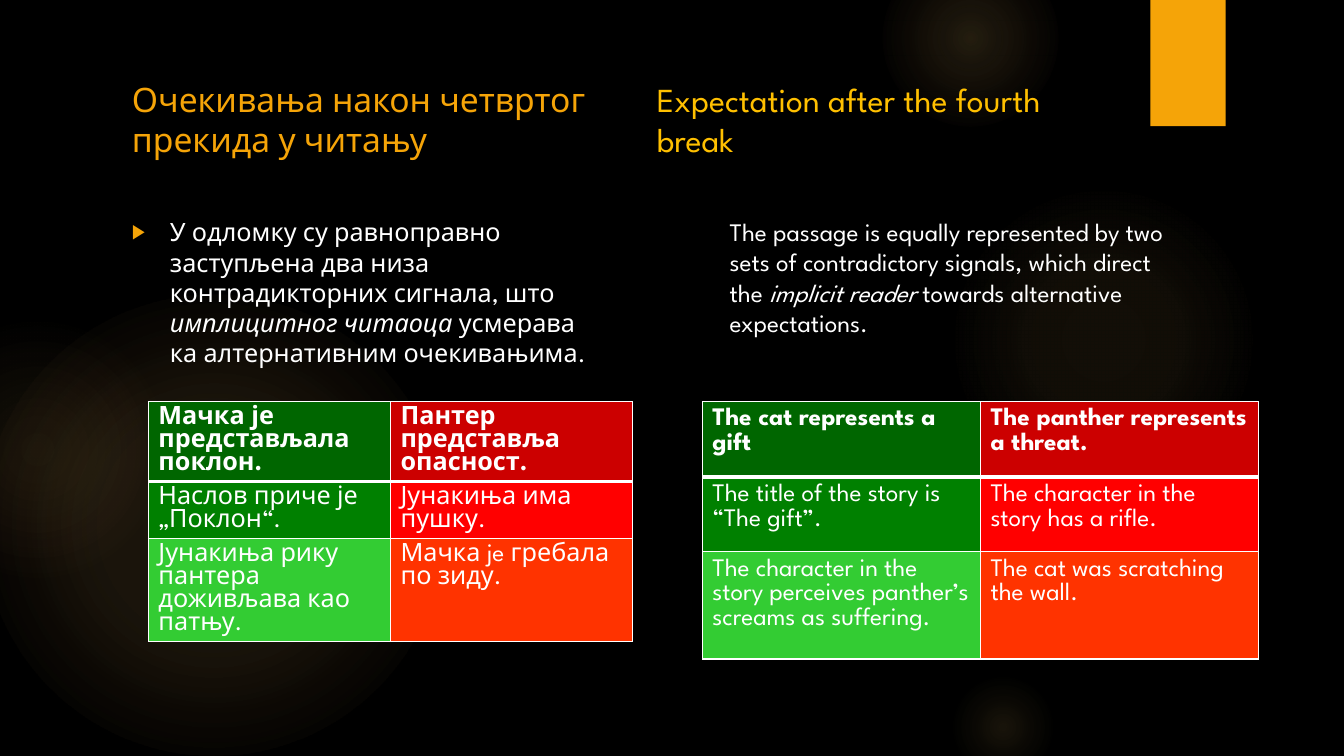
import lxml.etree
import pptx
import pptx.dml.color
import pptx.enum.shapes
import pptx.enum.text
import pptx.oxml
import pptx.oxml.ns
import pptx.util

Cm = pptx.util.Cm
Pt = pptx.util.Pt
qn = pptx.oxml.ns.qn
FONT = "League Spartan"
COLORS = {
    "black": "000000", "white": "FFFFFF", "amber": "F5A408", "gold": "FFC000",
    "glow": "FAC96A", "peach": "F59B74",
}
FILLS = [("006600", "CC0000"), ("008000", "FF0000"), ("33CC33", "FF3300")]

# left, top, size in cm; then (stop %, alpha %) pairs and the outer colour
GLOWS = [
    (-0.43, 7.42, 11.63, [(0, 11), (36, 10), (75, 0)], "glow"),
    (-2.34, 8.05, 6.55, [(0, 8), (36, 5), (71, 0)], "peach"),
    (23.9, 4.65, 7.82, [(0, 7), (36, 6), (69, 0)], "glow"),
    (22.23, -1.27, 4.45, [(0, 14), (36, 7), (73, 0)], "glow"),
    (23.9, 16.94, 2.74, [(0, 10), (31, 5), (66, 0)], "glow"),
]
SERBIAN = [
    ("Мачка је представљала поклон.", "Пантер представља опасност."),
    ("Наслов приче је „Поклон“.", "Јунакиња има пушку."),
    ("Јунакиња рику пантера доживљава као патњу.", "Мачка je гребала по зиду."),
]
ENGLISH = [
    ("The cat represents a gift", "The panther represents a threat."),
    ("The title of the story is “The gift”.", "The character in the story has a rifle."),
    ("The character in the story perceives panther’s screams as suffering.",
     "The cat was scratching the wall."),
]


def rgb(code):
    return pptx.dml.color.RGBColor.from_string(code)


def place(shape, left, top, width, height):
    shape.left, shape.top = Cm(left), Cm(top)
    shape.width, shape.height = Cm(width), Cm(height)


def style(para, size, color, bold=False, lines=None, before=0, after=0):
    font = para.font
    font.name, font.size, font.bold = FONT, Pt(size), bold
    font.color.rgb = rgb(color)
    para.line_spacing = lines
    para.space_before, para.space_after = Pt(before), Pt(after)


def add_back(slide, kind, box):
    """Add a plain shape behind the placeholders."""
    shape = slide.shapes.add_shape(kind, *map(Cm, box))
    shape.shadow.inherit = False
    shape.line.fill.background()
    slide.placeholders[1].element.addprevious(shape.element)
    return shape


def add_glow(slide, left, top, size, stops, outer):
    oval = pptx.enum.shapes.MSO_SHAPE.OVAL
    shape = add_back(slide, oval, (left, top, size, size))
    names = ["glow", "glow", outer]
    marks = "".join(
        f'<a:gs pos="{pos * 1000}"><a:srgbClr val="{COLORS[name]}">'
        f'<a:alpha val="{alpha * 1000}"/></a:srgbClr></a:gs>'
        for (pos, alpha), name in zip(stops, names))
    grad = pptx.oxml.parse_xml(
        f'<a:gradFill {pptx.oxml.ns.nsdecls("a")} rotWithShape="1"><a:gsLst>{marks}</a:gsLst>'
        '<a:path path="circle"><a:fillToRect l="50000" t="50000" r="50000" b="50000"/>'
        '</a:path></a:gradFill>')
    shape.element.spPr.find(qn("a:prstGeom")).addnext(grad)


def fill_head(holder, text, color, box):
    place(holder, *box)
    frame = holder.text_frame
    frame.text = text
    frame.auto_size = pptx.enum.text.MSO_AUTO_SIZE.NONE
    frame.vertical_anchor = pptx.enum.text.MSO_ANCHOR.BOTTOM
    style(frame.paragraphs[0], 24, color, before=4.8, after=6)


def fill_text(para, parts, **gaps):
    """Write plain, italic and plain parts in one paragraph."""
    for part, slant in zip(parts, (False, True, False)):
        run = para.add_run()
        run.text = part
        run.font.italic = slant
    style(para, 18, COLORS["white"], **gaps)


def add_bullet(para):
    props = para._p.get_or_add_pPr()
    props.set("marL", str(Cm(0.96)))
    props.set("indent", str(Cm(-0.96)))
    color = lxml.etree.SubElement(props, qn("a:buClr"))
    lxml.etree.SubElement(color, qn("a:srgbClr"), val=COLORS["amber"])
    lxml.etree.SubElement(props, qn("a:buSzPct"), val="80000")
    lxml.etree.SubElement(props, qn("a:buChar"), char="▶")


def add_edges(cell, row):
    """Draw white borders, thick between the header and the next row."""
    props = cell._tc.get_or_add_tcPr()
    for order, side in enumerate("LRTB"):
        thick = (row, side) in ((0, "B"), (1, "T"))
        edge = lxml.etree.Element(qn(f"a:ln{side}"), w=str(Pt(3 if thick else 1)))
        solid = lxml.etree.SubElement(edge, qn("a:solidFill"))
        lxml.etree.SubElement(solid, qn("a:srgbClr"), val=COLORS["white"])
        props.insert(order, edge)


def add_grid(slide, rows, box, heights, **gaps):
    frame = slide.shapes.add_table(len(rows), 2, *map(Cm, box))
    table = frame.table
    for row, texts in enumerate(rows):
        table.rows[row].height = Cm(heights[row])
        for col, text in enumerate(texts):
            cell = table.cell(row, col)
            cell.text = text
            cell.fill.solid()
            cell.fill.fore_color.rgb = rgb(FILLS[row][col])
            add_edges(cell, row)
            style(cell.text_frame.paragraphs[0], 18, COLORS["white"],
                  bold=row == 0, **gaps)


def add_note(slide, parts, box):
    note = slide.shapes.add_textbox(*map(Cm, box))
    frame = note.text_frame
    frame.word_wrap = True
    frame.auto_size = pptx.enum.text.MSO_AUTO_SIZE.SHAPE_TO_FIT_TEXT
    fill_text(frame.paragraphs[0], parts)


def main():
    deck = pptx.Presentation()
    deck.slide_width, deck.slide_height = Cm(33.87), Cm(19.05)
    slide = deck.slides.add_slide(deck.slide_layouts.get_by_name("Comparison"))
    back = slide.background.fill
    back.solid()
    back.fore_color.rgb = rgb(COLORS["black"])
    holders = slide.placeholders
    for spare in (holders[0], holders[4]):
        spare.element.getparent().remove(spare.element)

    for glow in GLOWS:
        add_glow(slide, *glow)
    tab = add_back(slide, pptx.enum.shapes.MSO_SHAPE.RECTANGLE, (28.99, 0, 1.9, 3.18))
    tab.fill.solid()
    tab.fill.fore_color.rgb = rgb(COLORS["amber"])

    fill_head(holders[1], "Очекивања након четвртог прекида у читању",
              COLORS["amber"], (3.07, 1.52, 12.22, 2.62))
    fill_head(holders[3], "Expectation after the fourth break",
              COLORS["gold"], (16.3, 2.54, 12.22, 1.6))

    body = holders[2]
    place(body, 3.07, 5.33, 12.22, 12.07)
    body.text_frame.auto_size = pptx.enum.text.MSO_AUTO_SIZE.NONE
    para = body.text_frame.paragraphs[0]
    add_bullet(para)
    fill_text(para, ("У одломку су равноправно заступљена два низа контрадикторних сигнала, што ",
                     "имплицитног читаоца ", "усмерава ка алтернативним очекивањима."),
              before=3.6, after=6)

    add_grid(slide, SERBIAN, (3.74, 10.12, 12.2, 6.04), (2.01, 1.44, 2.59))
    add_note(slide, ("The passage is equally represented by two sets of contradictory signals, "
                     "which direct the ", "implicit reader ", "towards alternative expectations."),
             (18.14, 5.33, 11.96, 4.11))
    add_grid(slide, ENGLISH, (17.7, 10.12, 14.02, 6.46), (1.9, 1.87, 2.69),
             lines=1.07, after=8)
    deck.save("out.pptx")


if __name__ == "__main__":
    main()
